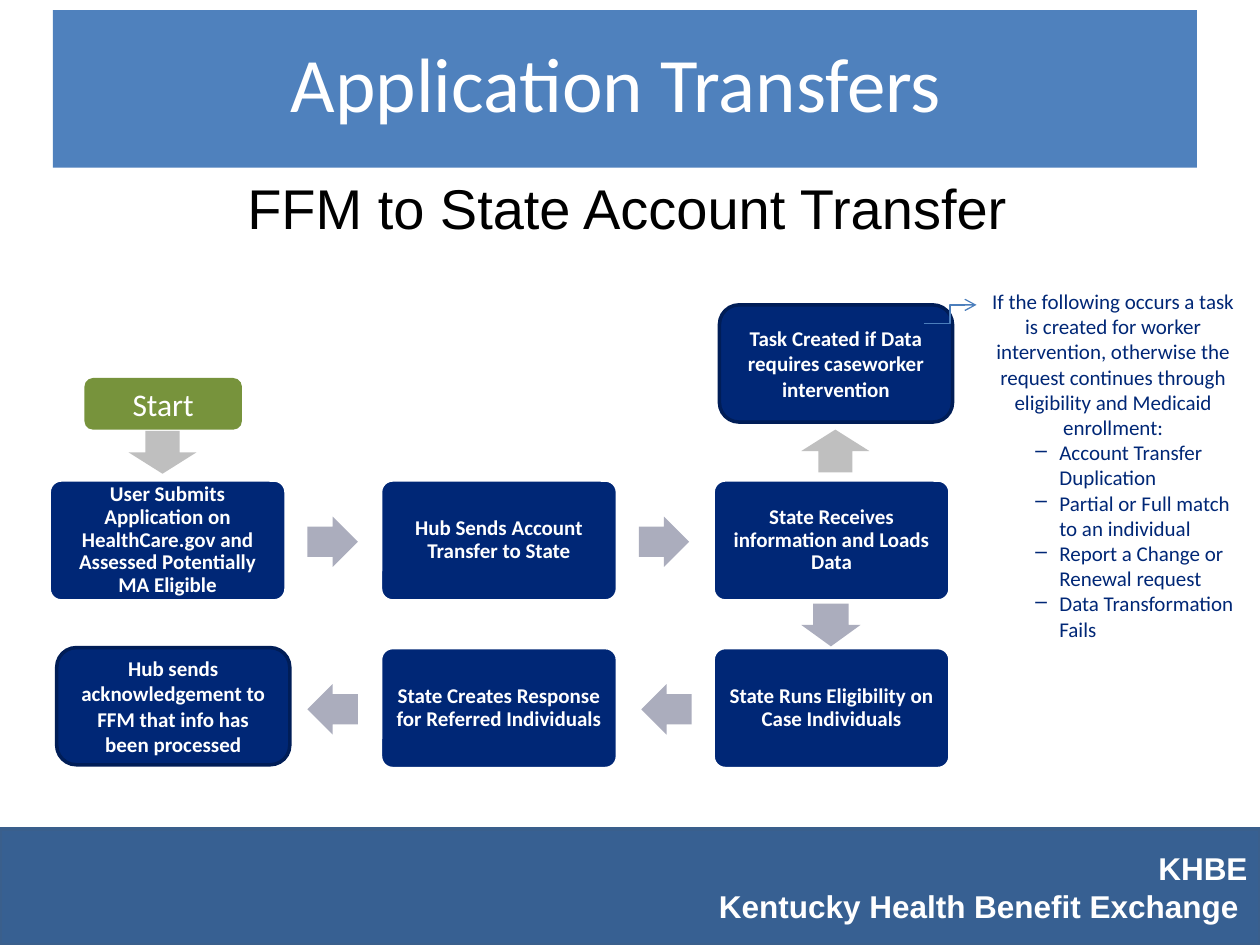
from dataclasses import dataclass

from lxml import etree
from pptx import Presentation
from pptx.dml.color import RGBColor
from pptx.enum.shapes import MSO_CONNECTOR, MSO_SHAPE
from pptx.enum.text import MSO_ANCHOR, PP_ALIGN
from pptx.oxml.ns import qn
from pptx.util import Inches, Pt

ROUNDED = MSO_SHAPE.ROUNDED_RECTANGLE
RECTANGLE = MSO_SHAPE.RECTANGLE
RIGHT, LEFT = MSO_SHAPE.RIGHT_ARROW, MSO_SHAPE.LEFT_ARROW
UP, DOWN = MSO_SHAPE.UP_ARROW, MSO_SHAPE.DOWN_ARROW
ELBOW = MSO_CONNECTOR.ELBOW
TOP, MIDDLE = MSO_ANCHOR.TOP, MSO_ANCHOR.MIDDLE
ALIGN_LEFT, ALIGN_CENTER, ALIGN_RIGHT = PP_ALIGN.LEFT, PP_ALIGN.CENTER, PP_ALIGN.RIGHT

COLORS = {
    "navy": "002776",
    "navy_edge": "001D57",
    "white": "FFFFFF",
    "black": "000000",
    "flow_arrow": "ABADBD",
    "side_arrow": "BFBFBF",
    "banner": "4F81BD",
    "footer": "376092",
    "footer_edge": "3A5F8C",
    "green": "77933C",
    "connector": "4B7EBC",
}

COLUMNS = [0.39, 3.02, 5.66]
ROWS = [3.81, 5.14]
STEP_WIDTH, STEP_HEIGHT = 1.88, 0.96


@dataclass
class Step:
    text: str
    column: int
    row: int


@dataclass
class Callout:
    text: str
    left: float
    top: float


@dataclass
class Arrow:
    kind: int
    left: float
    top: float
    width: float
    height: float
    color: str = "flow_arrow"
    shaft: float = 0.6


STEPS = [
    Step("User Submits Application on HealthCare.gov and Assessed Potentially MA Eligible", 0, 0),
    Step("Hub Sends Account Transfer to State", 1, 0),
    Step("State Receives information and Loads Data", 2, 0),
    Step("State Runs Eligibility on Case Individuals", 2, 1),
    Step("State Creates Response for Referred Individuals", 1, 1),
]
CALLOUTS = [
    Callout("Task Created if Data requires caseworker intervention", 5.71, 2.42),
    Callout("Hub sends acknowledgement to FFM that info has been processed", 0.45, 5.14),
]
ARROWS = [
    Arrow(RIGHT, 2.44, 4.1, 0.4, 0.4),
    Arrow(RIGHT, 5.07, 4.1, 0.4, 0.4),
    Arrow(DOWN, 6.36, 4.79, 0.47, 0.34),
    Arrow(LEFT, 5.09, 5.43, 0.4, 0.4),
    Arrow(LEFT, 2.44, 5.43, 0.4, 0.4),
    Arrow(UP, 6.36, 3.41, 0.54, 0.34, "side_arrow", 0.5),
    Arrow(DOWN, 1.02, 3.42, 0.54, 0.34, "side_arrow", 0.5),
]
TASK_INTRO = (
    "If the following occurs a task is created for worker intervention, otherwise "
    "the request continues through eligibility and Medicaid enrollment:"
)
TASK_REASONS = [
    "Account Transfer Duplication",
    "Partial or Full match to an individual",
    "Report a Change or Renewal request",
    "Data Transformation Fails",
]


def rgb(name: str) -> RGBColor:
    return RGBColor.from_string(COLORS[name])


def write(para, text: str, *, size: float = 12, font: str = "Calibri", color: str = "white",
          bold: bool = False, align=ALIGN_CENTER, spacing: float | None = None) -> None:
    para.alignment = align
    para.line_spacing = spacing
    span = para.add_run()
    span.text = text
    span.font.size = Pt(size)
    span.font.name = font
    span.font.bold = bold
    span.font.color.rgb = rgb(color)


def set_frame(frame, anchor, horizontal: float = 0.1, top: float = 0.05, bottom: float = 0.05) -> None:
    frame.word_wrap = True
    frame.vertical_anchor = anchor
    frame.margin_left = frame.margin_right = Inches(horizontal)
    frame.margin_top, frame.margin_bottom = Inches(top), Inches(bottom)


def add_block(page, kind, left: float, top: float, width: float, height: float,
              fill: str, edge: str | None = None):
    block = page.shapes.add_shape(kind, Inches(left), Inches(top), Inches(width), Inches(height))
    block.shadow.inherit = False
    block.fill.solid()
    block.fill.fore_color.rgb = rgb(fill)
    if edge:
        block.line.color.rgb = rgb(edge)
        block.line.width = Pt(2)
    else:
        block.line.fill.background()
    set_frame(block.text_frame, MIDDLE)
    return block


def add_step(page, step: Step) -> None:
    block = add_block(page, ROUNDED, COLUMNS[step.column], ROWS[step.row],
                      STEP_WIDTH, STEP_HEIGHT, "navy", "white")
    block.adjustments[0] = 0.1
    set_frame(block.text_frame, MIDDLE, horizontal=0.07)
    write(block.text_frame.paragraphs[0], step.text, bold=True, spacing=0.9)


def add_callout(page, callout: Callout) -> None:
    block = add_block(page, ROUNDED, callout.left, callout.top, 1.85, 0.93, "navy", "navy_edge")
    write(block.text_frame.paragraphs[0], callout.text, bold=True)


def add_arrow(page, arrow: Arrow) -> None:
    block = add_block(page, arrow.kind, arrow.left, arrow.top, arrow.width, arrow.height, arrow.color)
    block.adjustments[0] = arrow.shaft
    block.adjustments[1] = 0.5


def add_task_note(page) -> None:
    box = page.shapes.add_textbox(Inches(7.75), Inches(2.24), Inches(2.17), Inches(3.01))
    frame = box.text_frame
    set_frame(frame, TOP)
    write(frame.paragraphs[0], TASK_INTRO, color="navy")
    for reason in TASK_REASONS:
        para = frame.add_paragraph()
        para.level = 4
        properties = para._p.get_or_add_pPr()
        properties.set("marL", str(Inches(0.56)))
        properties.set("indent", str(Inches(-0.19)))
        etree.SubElement(properties, qn("a:buChar"), char="–")
        write(para, reason, color="navy", align=ALIGN_LEFT)


def add_task_connector(page) -> None:
    link = page.shapes.add_connector(ELBOW, Inches(7.33), Inches(2.57), Inches(7.75), Inches(2.42))
    link.line.color.rgb = rgb("connector")
    link.line.width = Pt(0.75)
    etree.SubElement(link.line._get_or_add_ln(), qn("a:tailEnd"), type="arrow")
    etree.SubElement(link._element.spPr, qn("a:effectLst"))


def main() -> None:
    deck = Presentation()
    deck.slide_width, deck.slide_height = Inches(10), Inches(7.5)
    page = deck.slides.add_slide(deck.slide_layouts[5])

    title = page.shapes.title
    title.left, title.top, title.width, title.height = map(Inches, (0.39, 1.34, 9.18, 0.37))
    set_frame(title.text_frame, TOP, horizontal=0, top=0.04, bottom=0)
    write(title.text_frame.paragraphs[0], "FFM to State Account Transfer",
          size=32, font="Arial", color="black")

    for step in STEPS:
        add_step(page, step)
    for callout in CALLOUTS:
        add_callout(page, callout)
    for arrow in ARROWS:
        add_arrow(page, arrow)
    add_task_note(page)
    add_task_connector(page)

    start = add_block(page, ROUNDED, 0.67, 3, 1.25, 0.41, "green")
    write(start.text_frame.paragraphs[0], "Start", size=18)

    banner = add_block(page, RECTANGLE, 0.42, 0.08, 9.08, 1.25, "banner")
    set_frame(banner.text_frame, TOP, horizontal=0, top=0.2, bottom=0)
    write(banner.text_frame.paragraphs[0], "Application Transfers ", size=44)

    footer = add_block(page, RECTANGLE, 0, 6.58, 10, 0.92, "footer", "footer_edge")
    footer_style = {"size": 18, "font": "Arial", "bold": True, "align": ALIGN_RIGHT}
    write(footer.text_frame.paragraphs[0], "KHBE", **footer_style)
    write(footer.text_frame.add_paragraph(), "Kentucky Health Benefit Exchange ", **footer_style)

    deck.save("out.pptx")


if __name__ == "__main__":
    main()
